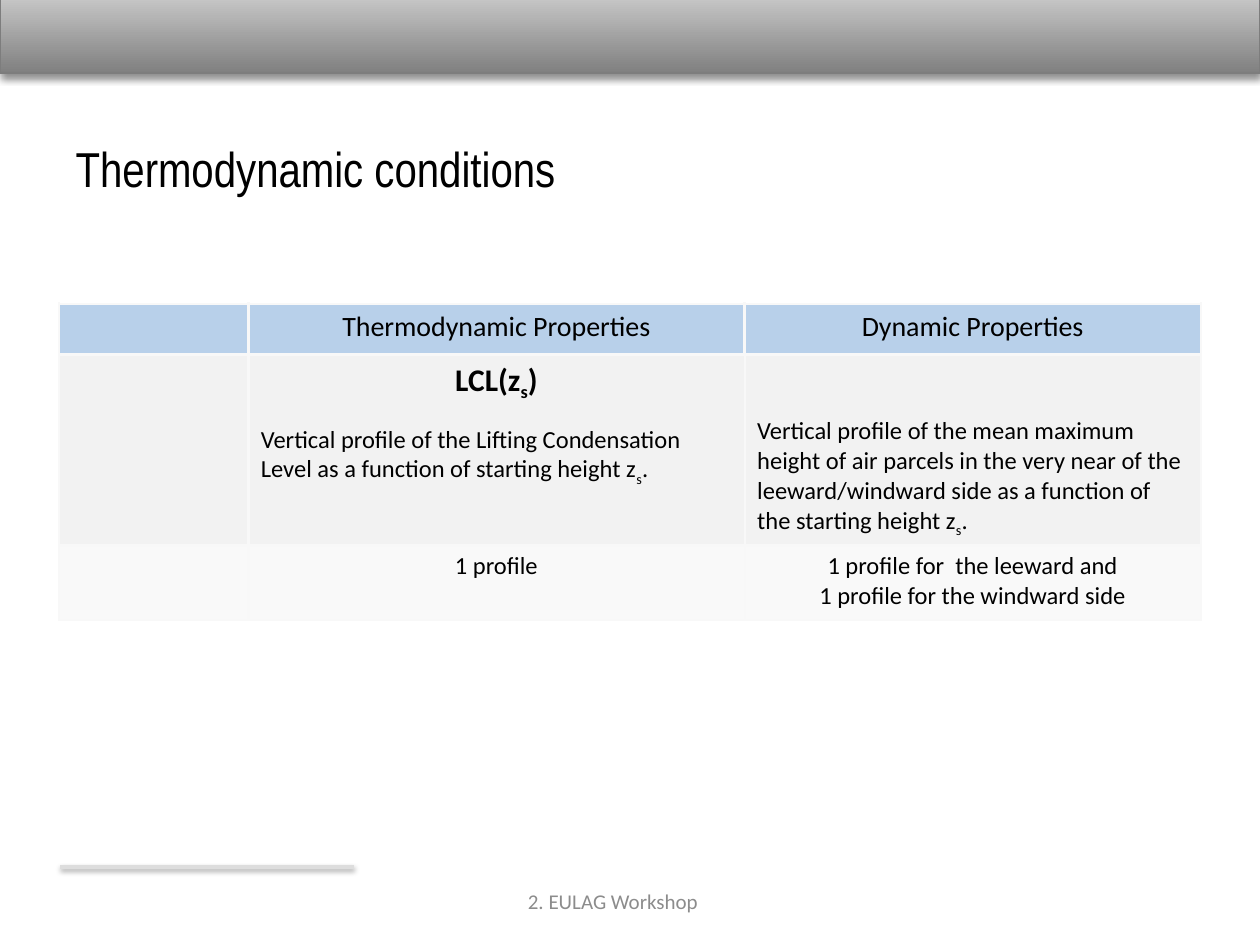
from dataclasses import dataclass

import pptx
import pptx.dml.color
import pptx.enum.shapes
import pptx.enum.text
import pptx.oxml
import pptx.oxml.ns
import pptx.util

Inches = pptx.util.Inches
Pt = pptx.util.Pt
Align = pptx.enum.text.PP_ALIGN
Anchor = pptx.enum.text.MSO_ANCHOR
NAMESPACE = pptx.oxml.ns.nsdecls("a")


@dataclass(frozen=True)
class Theme:
    title_font: str = "Arial Narrow"
    body_font: str = "Calibri"
    title_size: int = 28
    heading_size: int = 18
    header_size: int = 16
    body_size: int = 14
    footer_size: int = 12
    text: str = "000000"
    footer: str = "8C8C8C"
    bar_dark: str = "808080"
    bar_light: str = "CDCDCD"
    bar_line: str = "7D7D7D"
    rule: str = "DDDDDD"
    border: str = "F8F8F8"
    row_fills: tuple[str, ...] = ("B8D0EA", "F2F2F2", "F9F9F9")
    thin: float = 1.5
    thick: float = 2.25


THEME = Theme()


@dataclass(frozen=True)
class Line:
    """A paragraph; a piece after each underscore mark is one subscript letter."""
    text: str
    size: int = THEME.body_size
    bold: bool = False
    align: Align = Align.CENTER
    before: int = 0
    font: str = THEME.body_font
    color: str = THEME.text


@dataclass(frozen=True)
class Cell:
    lines: tuple[Line, ...] = ()
    margin_top: float = 0.05


EMPTY = Cell()
ROWS = (
    (EMPTY,
     Cell((Line("Thermodynamic Properties", THEME.header_size),)),
     Cell((Line("Dynamic Properties", THEME.header_size),))),
    (EMPTY,
     Cell((Line("LCL(z_s)", THEME.heading_size, bold=True),
           Line("Vertical profile of the Lifting Condensation Level as a function "
                "of starting height z_s.", align=Align.LEFT, before=12))),
     Cell((Line("Vertical profile of the mean maximum height of air parcels in the "
                "very near of the leeward/windward side as a function of the "
                "starting height z_s.", align=Align.LEFT),), margin_top=0.49)),
    (EMPTY,
     Cell((Line("1 profile"),)),
     Cell((Line("1 profile for  the leeward and"),
           Line("1 profile for the windward side")))),
)
COLUMN_WIDTHS = (1.5, 3.94, 3.62)
ROW_HEIGHTS = (0.4, 1.51, 0.59)


def rgb(value: str) -> pptx.dml.color.RGBColor:
    return pptx.dml.color.RGBColor.from_string(value)


def apply_format(target, values: dict) -> None:
    for name, value in values.items():
        setattr(target, name, value)


def write_lines(text_frame, lines: tuple[Line, ...]) -> None:
    for index, line in enumerate(lines):
        paragraph = text_frame.paragraphs[0] if index == 0 else text_frame.add_paragraph()
        apply_format(paragraph, {"alignment": line.align, "space_before": Pt(line.before)})
        first, *marked = line.text.split("_")
        pieces = [(first, False)]
        for piece in marked:
            pieces += [(piece[0], True), (piece[1:], False)]
        for text, is_subscript in pieces:
            run = paragraph.add_run()
            run.text = text
            apply_format(run.font, {"name": line.font, "size": Pt(line.size), "bold": line.bold})
            run.font.color.rgb = rgb(line.color)
            if is_subscript:
                run._r.get_or_add_rPr().set("baseline", "-25000")


def add_shadow(shape, alpha: int, blur: float, distance: float) -> None:
    properties = shape._element.spPr
    for old in properties.findall(pptx.oxml.ns.qn("a:effectLst")):
        properties.remove(old)
    properties.append(pptx.oxml.parse_xml(
        f'<a:effectLst {NAMESPACE}><a:outerShdw blurRad="{Pt(blur)}" dist="{Pt(distance)}" '
        f'dir="5400000" algn="t" rotWithShape="0"><a:srgbClr val="000000">'
        f'<a:alpha val="{alpha * 1000}"/></a:srgbClr></a:outerShdw></a:effectLst>'))


def add_header_bar(slide) -> None:
    bar = slide.shapes.add_shape(pptx.enum.shapes.MSO_SHAPE.RECTANGLE,
                                 Inches(0), Inches(-0.08), Inches(10), Inches(0.66))
    bar.fill.gradient()
    bar.fill.gradient_angle = 90
    stops = zip(bar.fill.gradient_stops, (THEME.bar_dark, THEME.bar_light))
    for position, (stop, color) in enumerate(stops):
        stop.position = position
        stop.color.rgb = rgb(color)
    bar.line.color.rgb = rgb(THEME.bar_line)
    bar.line.width = Pt(0.75)
    add_shadow(bar, alpha=43, blur=4, distance=3)


def add_footer_rule(slide) -> None:
    rule = slide.shapes.add_connector(pptx.enum.shapes.MSO_CONNECTOR.STRAIGHT,
                                      Inches(0.48), Inches(6.88), Inches(2.81), Inches(6.88))
    rule.line.color.rgb = rgb(THEME.rule)
    rule.line.width = Pt(2)
    add_shadow(rule, alpha=38, blur=3.1, distance=1.6)


def set_borders(cell, row: int, column: int) -> None:
    # The header row and the first column are set off by thicker lines.
    thick_sides = {
        "L": column == 1 or (row == 0 and column == 2),
        "R": column == 0 or (row == 0 and column == 1),
        "T": row == 1,
        "B": row == 0,
    }
    properties = cell._tc.get_or_add_tcPr()
    for index, (side, is_thick) in enumerate(thick_sides.items()):
        width = Pt(THEME.thick if is_thick else THEME.thin)
        properties.insert(index, pptx.oxml.parse_xml(
            f'<a:ln{side} {NAMESPACE} w="{width}"><a:solidFill>'
            f'<a:srgbClr val="{THEME.border}"/></a:solidFill></a:ln{side}>'))


def add_properties_table(slide) -> None:
    table = slide.shapes.add_table(
        len(ROW_HEIGHTS), len(COLUMN_WIDTHS), Inches(0.47), Inches(2.41),
        Inches(sum(COLUMN_WIDTHS)), Inches(sum(ROW_HEIGHTS))).table
    apply_format(table, {"first_row": False, "horz_banding": False})
    for column, width in zip(table.columns, COLUMN_WIDTHS):
        column.width = Inches(width)
    for row_index, (height, contents) in enumerate(zip(ROW_HEIGHTS, ROWS)):
        table.rows[row_index].height = Inches(height)
        for column_index, content in enumerate(contents):
            cell = table.cell(row_index, column_index)
            cell.margin_top = Inches(content.margin_top)
            cell.fill.solid()
            cell.fill.fore_color.rgb = rgb(THEME.row_fills[row_index])
            set_borders(cell, row_index, column_index)
            write_lines(cell.text_frame, content.lines)


def main() -> None:
    presentation = pptx.Presentation()
    apply_format(presentation, {"slide_width": Inches(10), "slide_height": Inches(7.5)})
    slide = presentation.slides.add_slide(presentation.slide_layouts[5])

    # Master-style decoration
    add_header_bar(slide)
    add_footer_rule(slide)

    # Title
    title = slide.shapes.title
    apply_format(title, {"left": Inches(0.5), "top": Inches(1.02),
                         "width": Inches(6.14), "height": Inches(0.55)})
    apply_format(title.text_frame, {
        "word_wrap": True, "vertical_anchor": Anchor.TOP, "margin_top": Inches(0.08),
        "auto_size": pptx.enum.text.MSO_AUTO_SIZE.NONE})
    write_lines(title.text_frame, (Line("Thermodynamic conditions", THEME.title_size,
                                        align=Align.LEFT, font=THEME.title_font),))

    # Table and footer
    add_properties_table(slide)
    footer = slide.shapes.add_textbox(Inches(3.28), Inches(6.95), Inches(3.17), Inches(0.4))
    apply_format(footer.text_frame, {"word_wrap": True, "vertical_anchor": Anchor.MIDDLE})
    write_lines(footer.text_frame, (Line("2. EULAG Workshop", THEME.footer_size,
                                         color=THEME.footer),))

    presentation.save("out.pptx")


if __name__ == "__main__":
    main()
